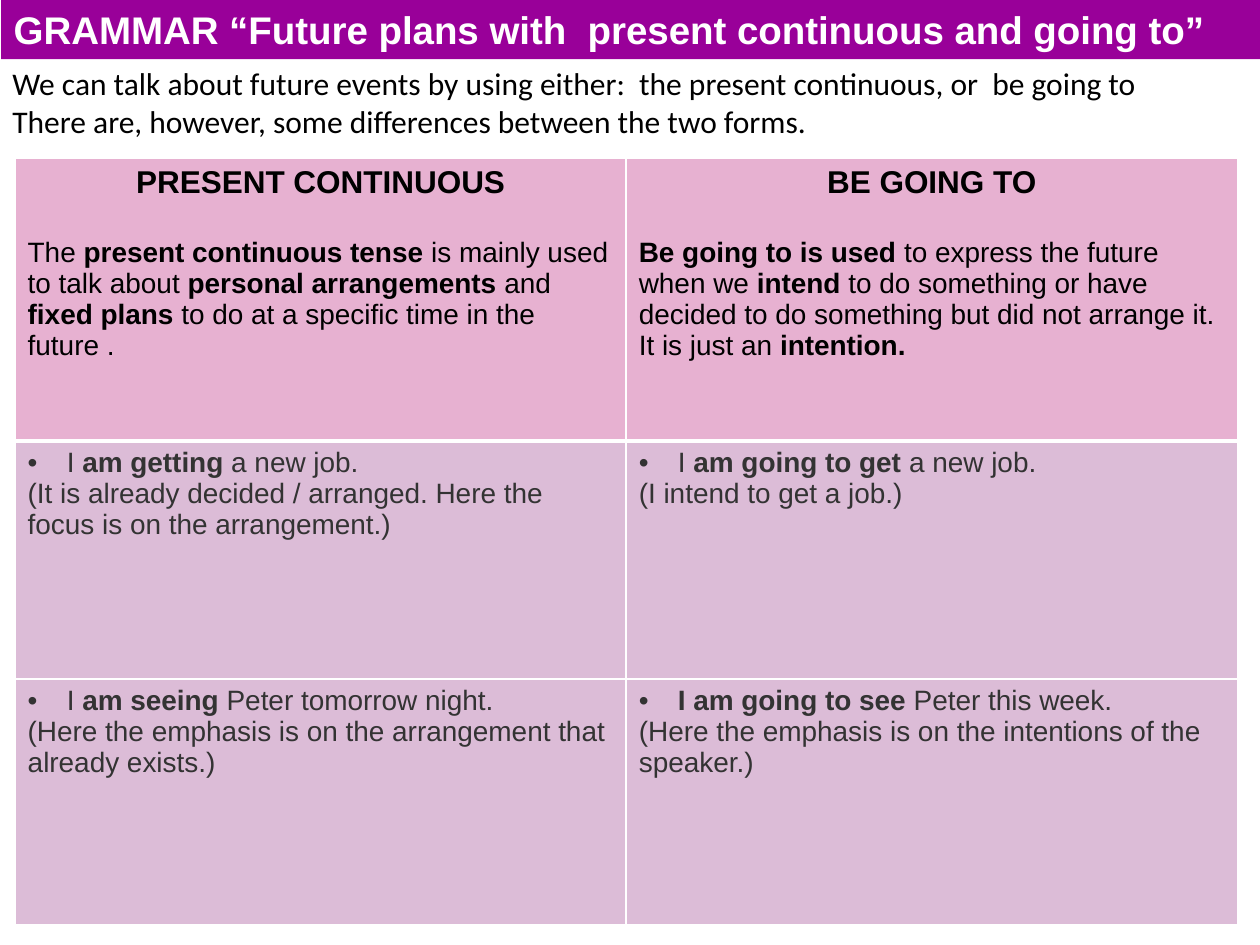
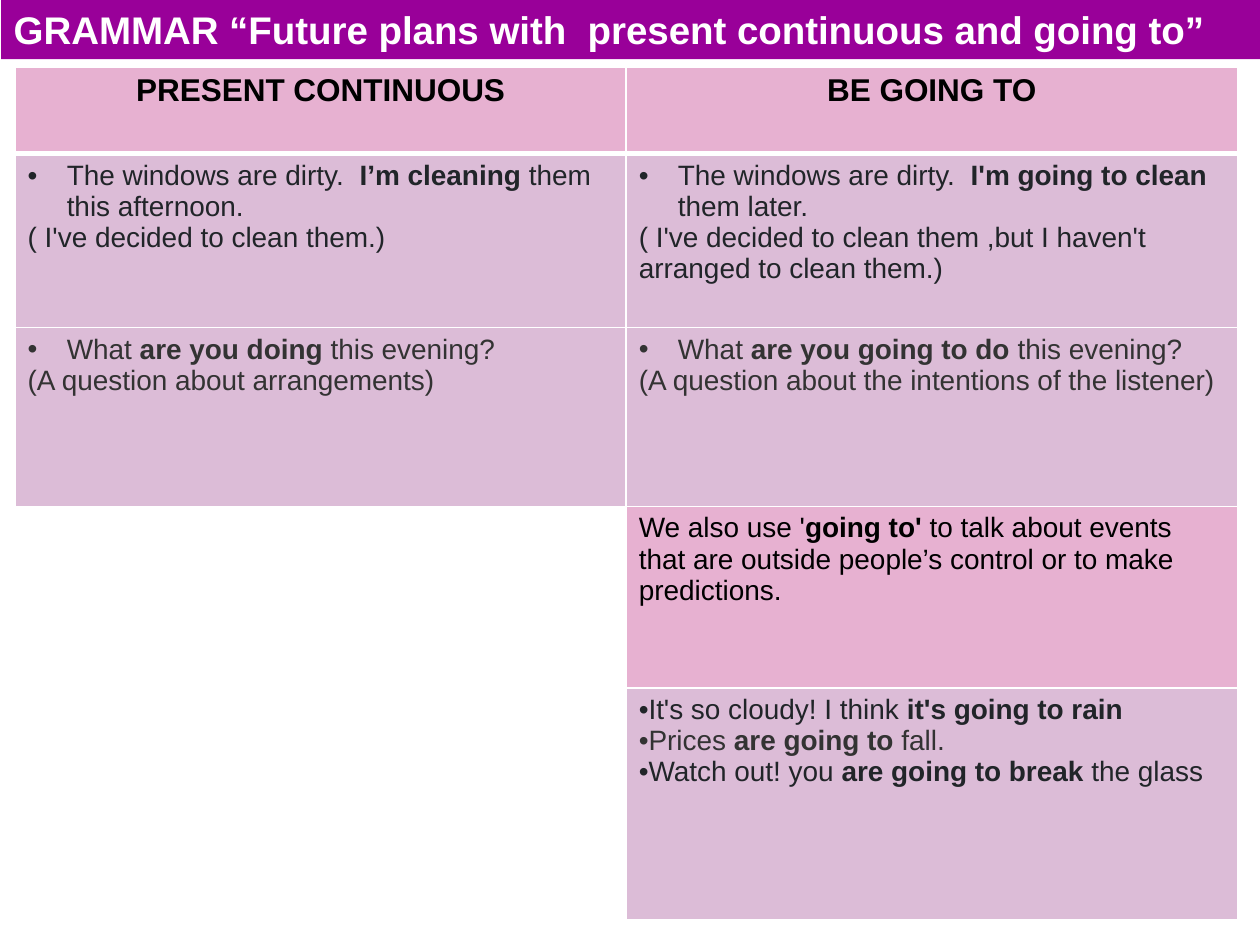
from lxml import etree
from pptx import Presentation
from pptx.dml.color import RGBColor
from pptx.enum.shapes import MSO_SHAPE
from pptx.enum.text import PP_ALIGN
from pptx.oxml.ns import qn
from pptx.util import Inches, Pt

RECTANGLE = MSO_SHAPE.RECTANGLE
LEFT, CENTER = PP_ALIGN.LEFT, PP_ALIGN.CENTER

COLORS = {
    "band": "990099",
    "rule": "E7B1D1",
    "example": "DCBCD7",
    "white": "FFFFFF",
    "black": "000000",
    "gray": "333333",
    "slate": "212529",
}
TITLE = "GRAMMAR “Future plans with  present continuous and going to”"
HEADINGS = ("PRESENT CONTINUOUS", "BE GOING TO")
BULLET_INDENT = 0.31


def rgb(name):
    return RGBColor.from_string(COLORS[name])


def write_text(paragraph, text, size=16, color="black", font="Arial",
               align=LEFT, after=0, bullet=False, indent=0):
    paragraph.alignment = align
    if after:
        paragraph.space_after = Pt(after)
    if bullet:
        properties = paragraph._p.get_or_add_pPr()
        properties.set("marL", str(Inches(indent)))
        properties.set("indent", str(-Inches(indent)))
        etree.SubElement(properties, qn("a:buFont"), typeface="Arial")
        etree.SubElement(properties, qn("a:buChar"), char="•")
    for index, piece in enumerate(text.split("**")):
        if piece:
            run = paragraph.add_run()
            run.text = piece
            run.font.name = font
            run.font.size = Pt(size)
            run.font.bold = index % 2 == 1
            run.font.color.rgb = rgb(color)


def line(text, **style):
    return text, style


def heading(text, after=0):
    return line(f"**{text}**", size=18, align=CENTER, after=after)


def example(sentence, meaning, color="gray"):
    return "example", [
        line(sentence, color=color, bullet=True, indent=BULLET_INDENT),
        line(meaning, color=color),
    ]


class Deck:
    def __init__(self):
        self.presentation = Presentation()
        self.presentation.slide_width = Inches(10)
        self.presentation.slide_height = Inches(7.5)
        self.slide = None

    def add_slide(self):
        layout = self.presentation.slide_layouts[6]
        self.slide = self.presentation.slides.add_slide(layout)
        self.add_title_band()

    def write_lines(self, frame, lines):
        frame.word_wrap = True
        for index, (text, style) in enumerate(lines):
            paragraph = frame.add_paragraph() if index else frame.paragraphs[0]
            write_text(paragraph, text, **style)

    def add_title_band(self):
        shape = self.slide.shapes.add_shape(
            RECTANGLE, Inches(0.01), 0, Inches(9.99), Inches(0.47))
        shape.shadow.inherit = False
        shape.fill.solid()
        shape.fill.fore_color.rgb = rgb("band")
        shape.line.fill.background()
        self.write_lines(shape.text_frame,
                         [line(f"**{TITLE}**", size=22, color="white")])

    def add_text(self, left, top, width, height, lines):
        box = self.slide.shapes.add_textbox(
            Inches(left), Inches(top), Inches(width), Inches(height))
        self.write_lines(box.text_frame, lines)

    def add_borders(self, cell, top, bottom):
        properties = cell._tc.get_or_add_tcPr()
        for side, width in (("L", 1), ("R", 1), ("T", top), ("B", bottom)):
            border = etree.SubElement(
                properties, qn(f"a:ln{side}"), w=str(Pt(width)))
            fill = etree.SubElement(border, qn("a:solidFill"))
            etree.SubElement(fill, qn("a:srgbClr"), val=COLORS["white"])

    def add_comparison(self, top, heights, rows):
        table = self.slide.shapes.add_table(
            len(rows), 2, Inches(0.12), Inches(top),
            Inches(9.7), Inches(sum(heights))).table
        table.first_row = table.horz_banding = False
        for column in table.columns:
            column.width = Inches(4.85)
        for row_index, (height, row) in enumerate(zip(heights, rows)):
            table.rows[row_index].height = Inches(height)
            for column_index, (fill, lines) in enumerate(row):
                cell = table.cell(row_index, column_index)
                self.add_borders(cell, top=3 if row_index == 1 else 1,
                                 bottom=3 if row_index == 0 else 1)
                cell.fill.solid()
                cell.fill.fore_color.rgb = rgb(fill)
                self.write_lines(cell.text_frame, lines)


def build_rules_slide(deck):
    deck.add_slide()
    deck.add_text(0, 0.46, 10, 0.71, [
        line(text, size=18, font="Calibri") for text in (
            "We can talk about future events by using either:  "
            "the present continuous, or  be going to",
            "There are, however, some differences between the two forms.",
        )])
    rules = (
        "The **present continuous tense** is mainly used to talk about "
        "**personal arrangements **and **fixed plans **to do at a specific "
        "time in the future .",
        "**Be going to is used** to express the future when we **intend** "
        "to do something or have decided to do something but did not "
        "arrange it. It is just an** intention.**",
    )
    deck.add_comparison(1.26, (2.24, 1.89, 1.95), [
        [("rule", [heading(title, after=21), line(rule)])
         for title, rule in zip(HEADINGS, rules)],
        [example("I **am getting** a new job.",
                 "(It is already decided / arranged. Here the focus is on "
                 "the arrangement.)"),
         example("I **am going to get **a new job.",
                 "(I intend to get a job.)")],
        [example("I **am seeing** Peter tomorrow night.",
                 "(Here the emphasis is on the arrangement that already "
                 "exists.)"),
         example("**I am going to see** Peter this week.",
                 "(Here the emphasis is on the intentions of the speaker.)")],
    ])


def build_examples_slide(deck):
    deck.add_slide()
    empty = ("white", [])
    predictions = (
        ("It's so cloudy! I think **it's going to rain**", "slate"),
        ("Prices **are going to** fall.", "gray"),
        ("Watch out! you **are going to break **the glass", "slate"),
    )
    deck.add_comparison(0.53, (0.69, 1.38, 1.42, 1.44, 1.84), [
        [("rule", [heading(title)]) for title in HEADINGS],
        [example("The windows are dirty.  **I’m cleaning **them this "
                 "afternoon.",
                 "( I've decided to clean them.)", color="slate"),
         example("The windows are dirty.  **I'm going to clean **them later.",
                 "( I've decided to clean them ,but I haven't arranged to "
                 "clean them.)", color="slate")],
        [example("What **are you doing** this evening?",
                 "(A question about arrangements)"),
         example("What** are you going to do **this evening?",
                 "(A question about the intentions of the listener)")],
        [empty,
         ("rule", [line("We also use '**going to'** to talk about events "
                        "that are outside people’s control or to make "
                        "predictions.")])],
        [empty,
         ("example", [line(text, color=color, bullet=True)
                      for text, color in predictions])],
    ])


def main():
    deck = Deck()
    build_rules_slide(deck)
    build_examples_slide(deck)
    deck.presentation.save("out.pptx")


if __name__ == "__main__":
    main()
